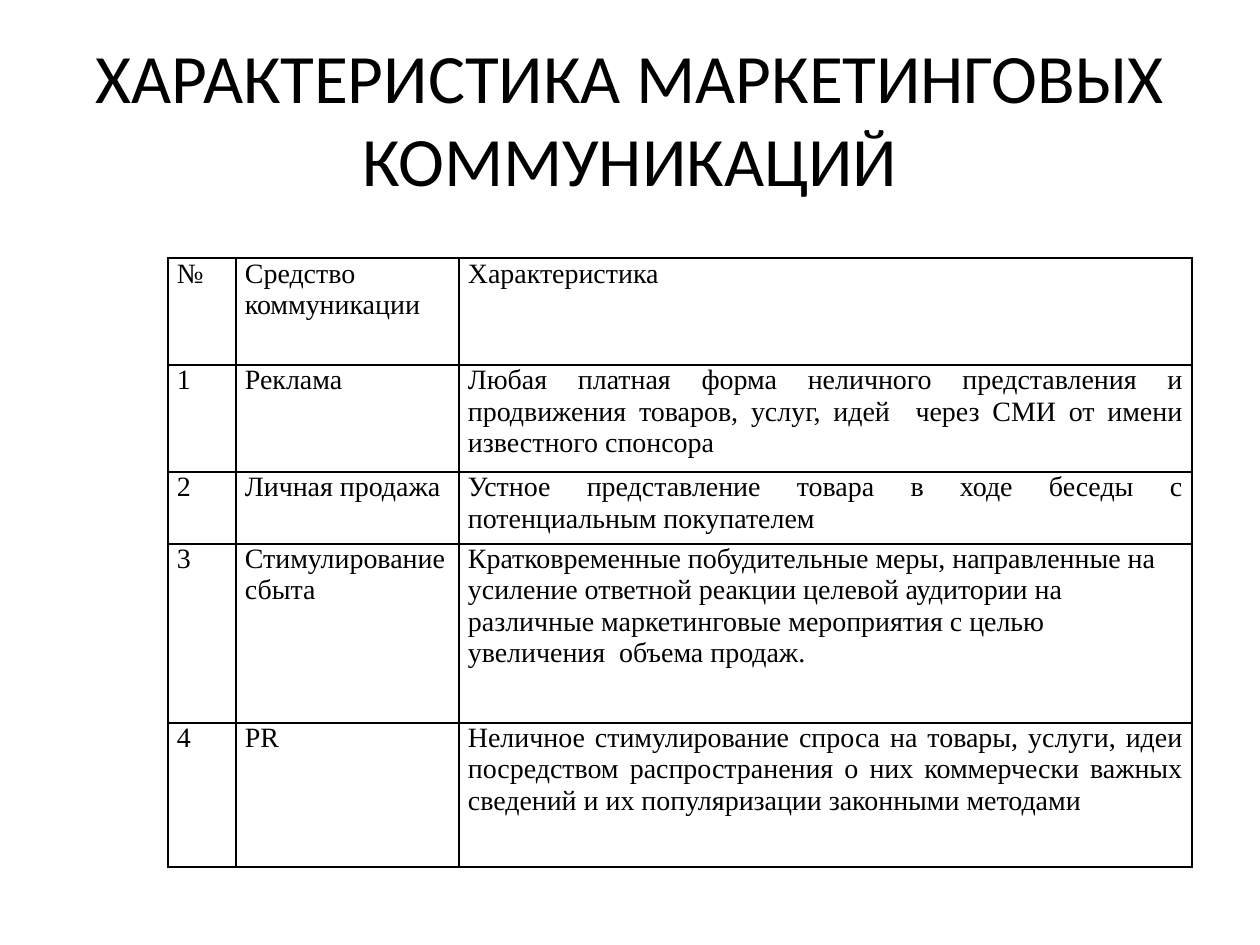
from lxml.etree import SubElement
from pptx import Presentation
from pptx.dml.color import RGBColor
from pptx.enum.text import MSO_ANCHOR, PP_ALIGN
from pptx.oxml.ns import qn
from pptx.util import Pt

TITLE = "ХАРАКТЕРИСТИКА МАРКЕТИНГОВЫХ КОММУНИКАЦИЙ"
ROWS = [
    ("№", "Средство коммуникации", "Характеристика"),
    ("1", "Реклама",
     "Любая платная форма неличного представления и продвижения товаров, "
     "услуг, идей  через СМИ от имени известного спонсора"),
    ("2", "Личная продажа",
     "Устное представление товара в ходе беседы с потенциальным покупателем"),
    ("3", "Стимулирование сбыта",
     "Кратковременные побудительные меры, направленные на  усиление ответной "
     "реакции целевой аудитории на различные маркетинговые мероприятия с целью  "
     "увеличения  объема продаж."),
    ("4", "PR",
     "Неличное стимулирование спроса на товары, услуги, идеи посредством "
     "распространения о них коммерчески важных сведений и их популяризации "
     "законными методами"),
]
LEFT_ALIGNED = (3, 2)
COLUMN_WIDTHS = (68, 223, 733)
ROW_HEIGHTS = (107, 107, 72, 179, 144)
TABLE_LEFT, TABLE_TOP = 168, 258
CELL_INSET = 9
BLACK = RGBColor(0, 0, 0)


def px(length):
    """Turn px into EMU."""
    return round(length * 914400 / 126)


def style(paragraph, font_name, size, alignment):
    """Set the alignment and font of a paragraph."""
    paragraph.alignment = alignment
    for run in paragraph.runs:
        run.font.name = font_name
        run.font.size = Pt(size)
        run.font.color.rgb = BLACK


def add_borders(cell):
    """Draw a thin black line on each side of a cell."""
    properties = cell._tc.get_or_add_tcPr()
    for position, side in enumerate(("lnL", "lnR", "lnT", "lnB")):
        line = SubElement(properties, qn(f"a:{side}"), w=str(Pt(1)))
        fill = SubElement(line, qn("a:solidFill"))
        SubElement(fill, qn("a:srgbClr"), val=str(BLACK))
        properties.insert(position, line)


def add_title(slide):
    """Add the centred heading."""
    heading = slide.shapes.add_textbox(px(63), px(38), px(1134), px(158))
    frame = heading.text_frame
    frame.word_wrap = True
    frame.vertical_anchor = MSO_ANCHOR.MIDDLE
    frame.text = TITLE
    style(frame.paragraphs[0], "Calibri", 39.6, PP_ALIGN.CENTER)


def add_communications(slide):
    """Add the table of communication means."""
    table = slide.shapes.add_table(
        len(ROWS), len(COLUMN_WIDTHS), px(TABLE_LEFT), px(TABLE_TOP),
        px(sum(COLUMN_WIDTHS)), px(sum(ROW_HEIGHTS))).table
    table.first_row = table.horz_banding = False
    for column, width in zip(table.columns, COLUMN_WIDTHS):
        column.width = px(width)
    for r, (texts, height) in enumerate(zip(ROWS, ROW_HEIGHTS)):
        table.rows[r].height = px(height)
        for c, text in enumerate(texts):
            cell = table.cell(r, c)
            cell.text_frame.text = text
            cell.fill.background()
            cell.margin_left = cell.margin_right = px(CELL_INSET)
            cell.margin_top = cell.margin_bottom = 0
            alignment = PP_ALIGN.LEFT if (r, c) == LEFT_ALIGNED else PP_ALIGN.JUSTIFY
            style(cell.text_frame.paragraphs[0], "Times New Roman", 16, alignment)
            add_borders(cell)


def main():
    """Build the slide on marketing communications."""
    deck = Presentation()
    deck.slide_width, deck.slide_height = px(1260), px(945)
    slide = deck.slides.add_slide(deck.slide_layouts[6])
    add_title(slide)
    add_communications(slide)
    deck.save("out.pptx")


if __name__ == "__main__":
    main()
